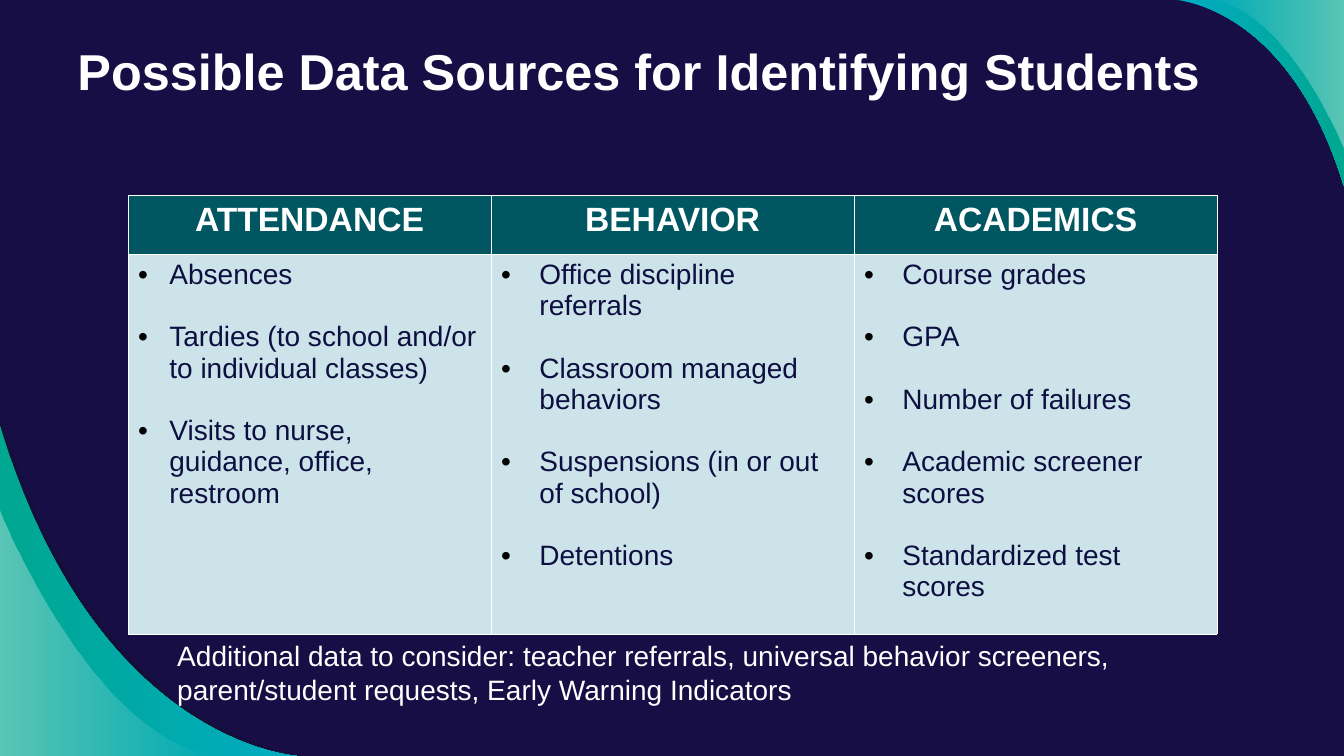
"""Build a slide listing data sources for identifying students."""
import dataclasses
import typing

import pptx
import pptx.dml.color
import pptx.enum.text
import pptx.oxml
import pptx.oxml.ns
import pptx.util

RGB = pptx.dml.color.RGBColor
Inches = pptx.util.Inches
Pt = pptx.util.Pt
qn = pptx.oxml.ns.qn

NAVY = RGB(0x16, 0x0E, 0x44)
SHADE = RGB(0x12, 0x10, 0x2F)
CYAN = RGB(0x00, 0xAC, 0xC2)
GREEN = RGB(0x00, 0xA7, 0x91)
WHITE = RGB(0xFF, 0xFF, 0xFF)
BLACK = RGB(0x00, 0x00, 0x00)
TEAL = RGB(0x00, 0x56, 0x61)
PALE = RGB(0xCC, 0xE3, 0xE9)
INK = RGB(0x0D, 0x0F, 0x41)
WIDE, HIGH = 13.33, 7.5
NS = 'xmlns:a="http://schemas.openxmlformats.org/drawingml/2006/main"'

TITLE = {"size": Pt(36), "bold": True}
HEAD = {"size": Pt(24), "bold": True}
BODY = {"size": Pt(20), "bold": False}

Point = tuple[float, float]


@dataclasses.dataclass
class Swoosh:
    """A corner shape bounded by one Bezier curve."""
    curve: tuple[Point, Point, Point, Point]
    corner: Point
    tints: tuple[RGB, RGB]
    alphas: tuple[int, int] = (100, 100)


@dataclasses.dataclass
class Column:
    """A table column with its heading and bullets."""
    head: str
    items: list[str]
    indent: float = 0.38


@dataclasses.dataclass
class Label:
    """A free text box."""
    text: str
    box: tuple[float, float, float, float]
    form: dict[str, typing.Any]
    inset: float = 0.05


LOW = (0, HIGH)
TOP = (WIDE, 0)
SWOOSHES = [
    Swoosh(((0, 4.13), (0.98, 7.39), (3.03, 7.5), (3.03, 7.5)), LOW, (SHADE, SHADE), (54, 54)),
    Swoosh(((0, 4.22), (0.95, 7.39), (2.95, 7.5), (2.95, 7.5)), LOW, (GREEN, CYAN)),
    Swoosh(((0, 5.06), (0, 5.06), (0.91, 7.35), (2.16, 7.5)), LOW, (WHITE, WHITE), (36, 0)),
    Swoosh(((11.67, 0), (11.67, 0), (12.79, 0.06), (WIDE, 1.85)), TOP, (CYAN, GREEN)),
    Swoosh(((12.01, 0), (12.77, 0.09), (WIDE, 1.49), (WIDE, 1.49)), TOP, (WHITE, WHITE), (0, 36)),
]
COLUMNS = [
    Column("ATTENDANCE", ["Absences", "Tardies (to school and/or to individual classes)",
                          "Visits to nurse, guidance, office, restroom"], 0.31),
    Column("BEHAVIOR", ["Office discipline referrals", "Classroom managed behaviors",
                        "Suspensions (in or out of school)", "Detentions"]),
    Column("ACADEMICS", ["Course grades", "GPA", "Number of failures",
                         "Academic screener scores", "Standardized test scores"]),
]
LABELS = [
    Label("Possible Data Sources for Identifying Students", (0.67, 0.3, 12, 1.25), TITLE, 0.1),
    Label("Additional data to consider: teacher referrals, universal behavior screeners, "
          "parent/student requests, Early Warning Indicators", (1.66, 6.29, 10.2, 0.77), BODY),
]


def set_all(thing: typing.Any, form: dict[str, typing.Any]) -> None:
    """Set each format value on an object."""
    for name, value in form.items():
        setattr(thing, name, value)


def write(para: typing.Any, text: str, form: dict[str, typing.Any], color: RGB) -> None:
    """Put one styled run in a paragraph."""
    run = para.add_run()
    run.text = text
    set_all(run.font, {"name": "Arial", **form})
    run.font.color.rgb = color


def bend(shape: typing.Any) -> None:
    """Turn the first three line segments into one curve."""
    lines = list(shape._element.iter(qn("a:lnTo")))[:3]
    curve = pptx.oxml.parse_xml(f"<a:cubicBezTo {NS}/>")
    lines[0].addprevious(curve)
    for line in lines:
        curve.append(line[0])
        line.getparent().remove(line)


def draw_swoosh(slide: typing.Any, swoosh: Swoosh) -> None:
    """Draw one corner shape with its gradient."""
    first, *rest = [(Inches(x), Inches(y)) for x, y in (*swoosh.curve, swoosh.corner)]
    pen = slide.shapes.build_freeform(*first)
    pen.add_line_segments(rest, close=True)
    shape = pen.convert_to_shape()
    bend(shape)
    shape.shadow.inherit = False
    shape.line.fill.background()
    shape.fill.gradient()
    shape.fill.gradient_angle = 0
    for stop, tint in zip(shape.fill.gradient_stops, swoosh.tints):
        stop.color.rgb = tint
    tags = shape._element.spPr.iter(qn("a:srgbClr"))
    for tag, alpha in zip(tags, swoosh.alphas):
        if alpha < 100:
            tag.append(pptx.oxml.parse_xml(f'<a:alpha {NS} val="{alpha * 1000}"/>'))


def dress(cell: typing.Any, color: RGB) -> None:
    """Give a cell white borders and a fill."""
    props = cell._tc.get_or_add_tcPr()
    for side in "LRTB":
        props.append(pptx.oxml.parse_xml(
            f'<a:ln{side} {NS} w="{Pt(0.75)}"><a:solidFill><a:srgbClr val="{WHITE}"/>'
            f'</a:solidFill></a:ln{side}>'))
    cell.fill.solid()
    cell.fill.fore_color.rgb = color


def add_dot(para: typing.Any, indent: float) -> None:
    """Give a paragraph a hanging bullet."""
    props = para._p.get_or_add_pPr()
    props.set("marL", str(Inches(indent)))
    props.set("indent", str(-Inches(indent)))
    for tag in (f'<a:buClr {NS}><a:srgbClr val="{BLACK}"/></a:buClr>',
                f'<a:buFont {NS} typeface="Arial"/>', f'<a:buChar {NS} char="•"/>'):
        props.append(pptx.oxml.parse_xml(tag))


def draw_table(slide: typing.Any, columns: list[Column]) -> None:
    """Draw the table of data sources."""
    box = map(Inches, (1.27, 1.94, 10.8, 4.35))
    table = slide.shapes.add_table(2, len(columns), *box).table
    table.horz_banding = False
    for row, height in zip(table.rows, (0.58, 3.77)):
        row.height = Inches(height)
    for i, column in enumerate(columns):
        table.columns[i].width = Inches(3.6)
        top, body = table.cell(0, i), table.cell(1, i)
        dress(top, TEAL)
        dress(body, PALE)
        para = top.text_frame.paragraphs[0]
        para.alignment = pptx.enum.text.PP_ALIGN.CENTER
        write(para, column.head, HEAD, WHITE)
        frame = body.text_frame
        for j, item in enumerate(column.items):
            para = frame.add_paragraph() if j else frame.paragraphs[0]
            para.space_before = Pt(22.3 if j else 0)
            add_dot(para, column.indent)
            write(para, item, BODY, INK)


def draw_label(slide: typing.Any, label: Label) -> None:
    """Draw one text box."""
    frame = slide.shapes.add_textbox(*map(Inches, label.box)).text_frame
    edge = Inches(label.inset)
    set_all(frame, {"word_wrap": True, "margin_top": edge, "margin_bottom": edge})
    write(frame.paragraphs[0], label.text, label.form, WHITE)


def main() -> None:
    """Build and save the deck."""
    deck = pptx.Presentation()
    set_all(deck, {"slide_width": Inches(WIDE), "slide_height": Inches(HIGH)})
    slide = deck.slides.add_slide(deck.slide_layouts[6])
    back = slide.background.fill
    back.solid()
    back.fore_color.rgb = NAVY
    for swoosh in SWOOSHES:
        draw_swoosh(slide, swoosh)
    draw_table(slide, COLUMNS)
    for label in LABELS:
        draw_label(slide, label)
    deck.save("out.pptx")


if __name__ == "__main__":
    main()
